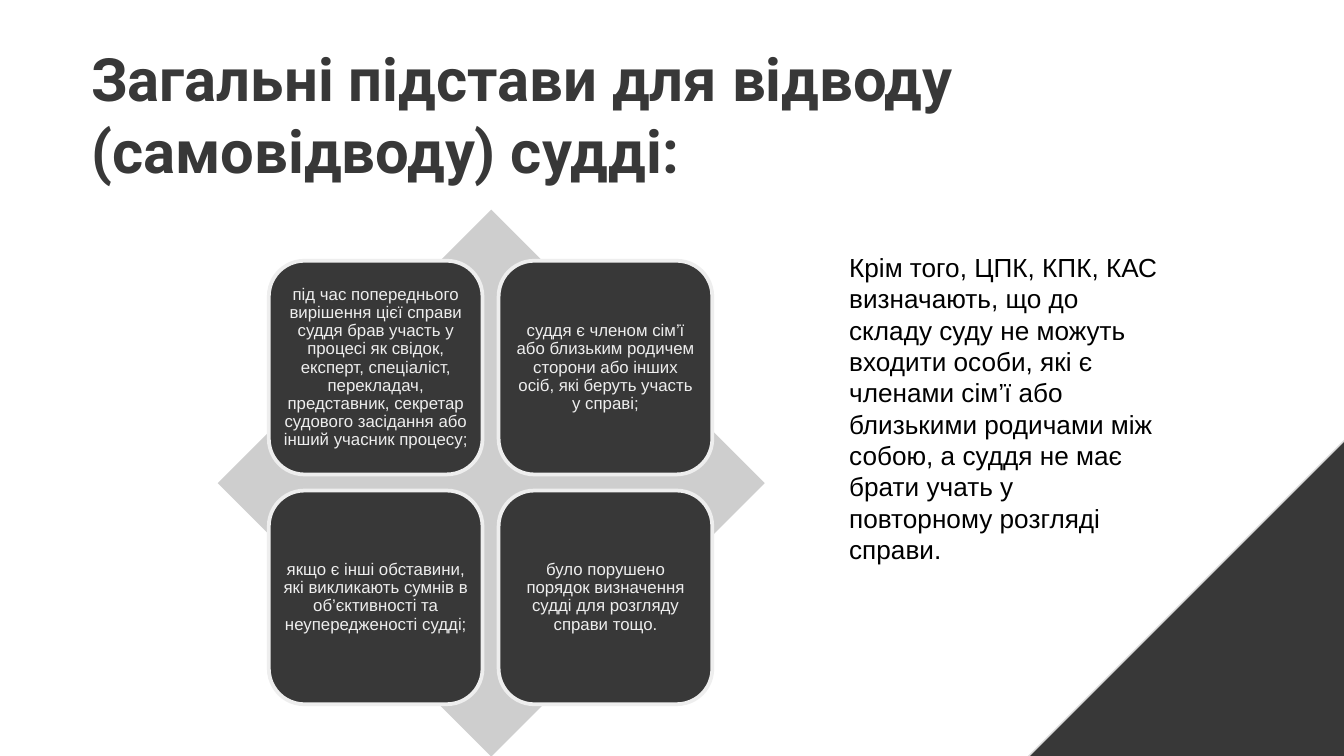
from pptx import Presentation
from pptx.dml.color import RGBColor
from pptx.enum.shapes import MSO_SHAPE
from pptx.enum.text import MSO_ANCHOR, PP_ALIGN
from pptx.util import Inches, Pt

DIAMOND = MSO_SHAPE.DIAMOND
ROUNDED = MSO_SHAPE.ROUNDED_RECTANGLE
TRIANGLE = MSO_SHAPE.RIGHT_TRIANGLE
DARK, PALE, GREY = "383838", "EEEEEE", "CECECE"

prs = Presentation()
prs.slide_width = Inches(10)
prs.slide_height = prs.slide_width * 9 // 16
slide = prs.slides.add_slide(prs.slide_layouts[6])


def add_block(preset, left, top, size, fill, outline=None, outline_width=0):
    """Add a square-bounded preset shape; without an outline colour it has no line."""
    block = slide.shapes.add_shape(preset, *map(Inches, (left, top, size, size)))
    block.shadow.inherit = False
    block.fill.solid()
    block.fill.fore_color.rgb = RGBColor.from_string(fill)
    if outline:
        block.line.color.rgb = RGBColor.from_string(outline)
        block.line.width = Pt(outline_width)
    else:
        block.line.fill.background()
    return block


def write(holder, text, size, color, font, inset, anchor=MSO_ANCHOR.TOP):
    """Fill a shape with one paragraph and return it; inset is (sides, top and bottom)."""
    frame = holder.text_frame
    frame.word_wrap = True
    frame.vertical_anchor = anchor
    frame.margin_left = frame.margin_right = Inches(inset[0])
    frame.margin_top = frame.margin_bottom = Inches(inset[1])
    paragraph = frame.paragraphs[0]
    paragraph.text = text
    paragraph.font.size = Pt(size)
    paragraph.font.name = font
    paragraph.font.color.rgb = RGBColor.from_string(color)
    return paragraph


# Corner triangle, turned so that its right angle sits at the bottom right
corner = add_block(TRIANGLE, 6.35, 1.68, 5.25, DARK, "DBDBDB", 0.75)
corner.rotation = 270

# Matrix of grounds: two by two cards over a diamond
add_block(DIAMOND, 1.62, 1.56, 4.07, GREY)

MATRIX_LEFT, MATRIX_TOP = 2, 1.94
CARD, GAP = 1.59, 0.12
grounds = [
    "під час попереднього вирішення цієї справи суддя брав участь у процесі "
    "як свідок, експерт, спеціаліст, перекладач, представник, секретар "
    "судового засідання або інший учасник процесу;",
    "суддя є членом сім’ї або близьким родичем сторони або інших осіб, "
    "які беруть участь у справі;",
    "якщо є інші обставини, які викликають сумнів в об’єктивності та "
    "неупередженості судді;",
    "було порушено порядок визначення судді для розгляду справи тощо.",
]
for index, ground in enumerate(grounds):
    row, column = divmod(index, 2)
    card = add_block(ROUNDED, MATRIX_LEFT + column * (CARD + GAP),
                     MATRIX_TOP + row * (CARD + GAP), CARD, DARK, PALE, 2)
    wording = write(card, ground, 9, PALE, "Arial", (0.03, 0.04), MSO_ANCHOR.MIDDLE)
    wording.alignment = PP_ALIGN.CENTER
    wording.line_spacing = 0.9

title = slide.shapes.add_textbox(Inches(0.58), Inches(0.21), Inches(7.45), Inches(0.58))
heading = write(title, "Загальні підстави для відводу (самовідводу) судді:",
                32, DARK, "Roboto", (0.1, 0.1))
heading.font.bold = True

remark = slide.shapes.add_textbox(Inches(6.22), Inches(1.82), Inches(2.53), Inches(1.99))
write(remark,
      "Крім того, ЦПК, КПК, КАС визначають, що до складу суду не можуть входити "
      "особи, які є членами сім’ї або близькими родичами між собою, а суддя не має "
      "брати учать у повторному розгляді справи.",
      14, "000000", "Arial", (0.1, 0.05))

prs.save("out.pptx")
